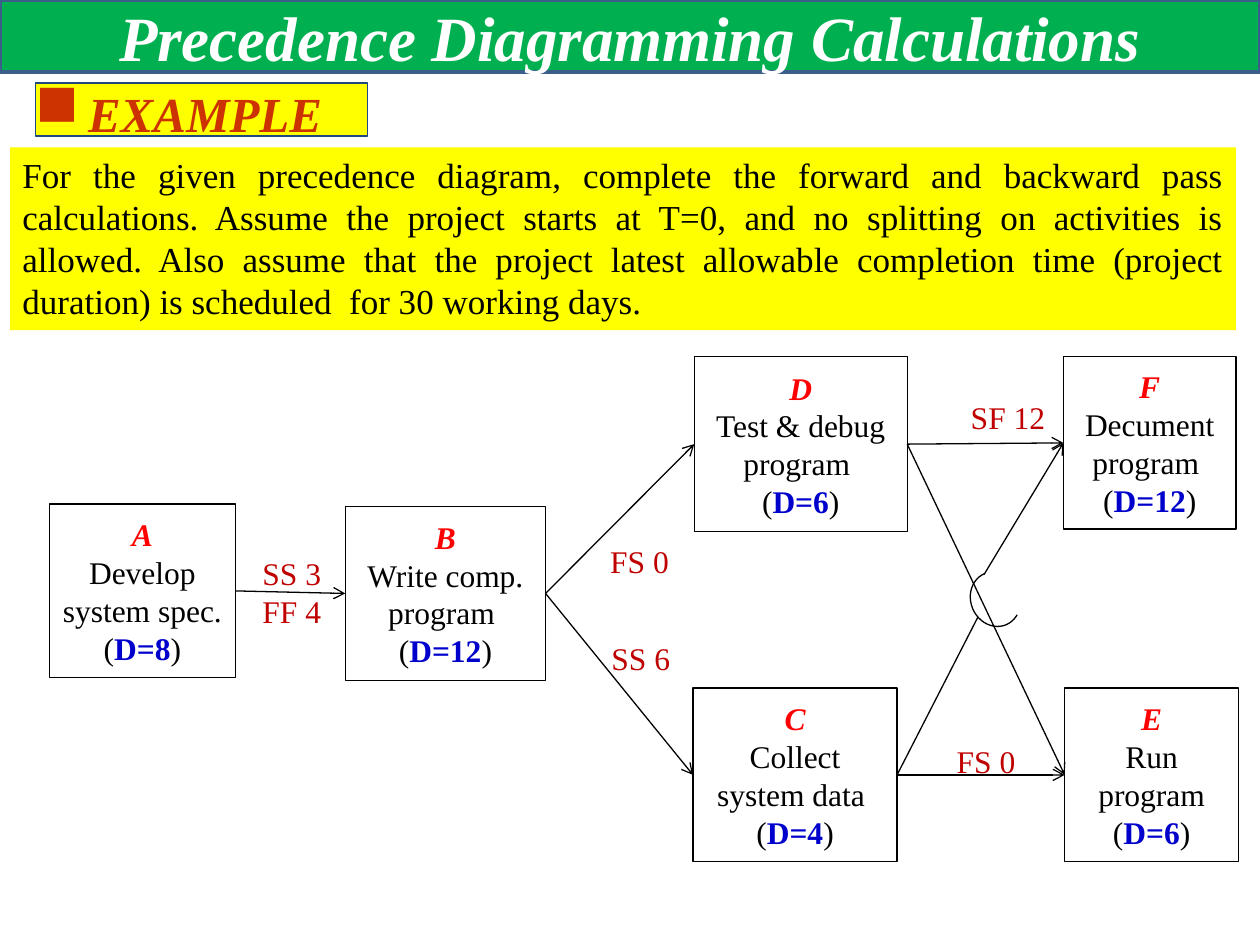
from lxml import etree
from pptx import Presentation
from pptx.dml.color import RGBColor
from pptx.enum.shapes import MSO_CONNECTOR, MSO_SHAPE
from pptx.enum.text import MSO_ANCHOR, MSO_AUTO_SIZE, PP_ALIGN
from pptx.oxml import parse_xml
from pptx.oxml.ns import nsdecls, qn
from pptx.util import Inches, Pt

RECT, ARC, STRAIGHT = MSO_SHAPE.RECTANGLE, MSO_SHAPE.ARC, MSO_CONNECTOR.STRAIGHT
TOP, MIDDLE = MSO_ANCHOR.TOP, MSO_ANCHOR.MIDDLE
CENTER, LEFT, JUSTIFY = PP_ALIGN.CENTER, PP_ALIGN.LEFT, PP_ALIGN.JUSTIFY
LEFT_SITE, RIGHT_SITE = 1, 3
FONT = "Times New Roman"
C = {"green": "00B050", "title_line": "3A5F8C", "yellow": "FFFF00", "navy": "1F497D",
     "orange": "CC3300", "black": "000000", "white": "FFFFFF", "label": "C00000",
     "letter": "FF0000", "duration": "0000CC"}

TITLE = "Precedence Diagramming Calculations"
HEADING = "EXAMPLE"
TASK = ("For the given precedence diagram, complete the forward and backward pass "
        "calculations. Assume the project starts at T=0, and no splitting on activities "
        "is allowed. Also assume that the project latest allowable completion time "
        "(project duration) is scheduled  for 30 working days. ")
# letter: (name, duration, (left, top, width, height))
ACTIVITIES = {
    "A": ("Develop system spec. ", 8, (0.39, 4, 1.48, 1.38)),
    "B": ("Write comp. program ", 12, (2.74, 4.02, 1.59, 1.38)),
    "C": ("Collect system data ", 4, (5.5, 5.46, 1.62, 1.38)),
    "D": ("Test & debug program ", 6, (5.51, 2.83, 1.69, 1.39)),
    "E": ("Run program", 6, (8.45, 5.46, 1.38, 1.38)),
    "F": ("Decument program ", 12, (8.44, 2.83, 1.37, 1.37)),
}
LINKS = ["AB", "BD", "BC", "DF", "CE", "DE"]
LABELS = [
    (["SS 3", "FF 4"], (1.97, 4.24, 0.69, 0.91)),
    (["FS 0"], (4.73, 4.16, 0.69, 0.59)),
    (["SS 6"], (4.74, 4.91, 0.69, 0.63)),
    (["SF 12"], (7.58, 2.96, 0.84, 0.69)),
    (["FS 0"], (7.48, 5.74, 0.69, 0.59)),
]
# The C-F link hops over the D-E link
HOP_START, HOP_END = (7.76, 4.9), (7.81, 4.56)
HOP_ARC = (7.68, 4.56, 0.44, 0.39)


def rgb(name):
    return RGBColor.from_string(C[name])


def inches(values):
    return [Inches(v) for v in values]


def style_font(font, size, color, bold=False, italic=False):
    font.name, font.size, font.bold, font.italic = FONT, Pt(size), bold, italic
    font.color.rgb = rgb(color)


def paint(s, fill, line=None, width=0.75):
    s.shadow.inherit = False
    s.fill.solid()
    s.fill.fore_color.rgb = rgb(fill)
    if line:
        s.line.color.rgb = rgb(line)
        s.line.width = Pt(width)
    else:
        s.line.fill.background()


def add_box(slide, at, fill, line=None, anchor=MIDDLE):
    s = slide.shapes.add_shape(RECT, *inches(at))
    paint(s, fill, line)
    s.text_frame.word_wrap = True
    s.text_frame.vertical_anchor = anchor
    return s


def add_title(slide):
    s = slide.shapes.title
    s.left, s.top, s.width, s.height = inches((0, 0, 10, 0.57))
    s._element.spPr.insert(1, parse_xml(
        f'<a:prstGeom {nsdecls("a")} prst="roundRect"><a:avLst>'
        '<a:gd name="adj" fmla="val 50000"/></a:avLst></a:prstGeom>'))
    paint(s, "green", "title_line", 2)
    tf = s.text_frame
    tf.text = TITLE
    tf.auto_size, tf.vertical_anchor = MSO_AUTO_SIZE.NONE, MIDDLE
    tf.paragraphs[0].alignment = CENTER
    style_font(tf.paragraphs[0].font, 36, "white", True, True)


def add_heading(slide):
    tf = add_box(slide, (0.28, 0.66, 2.64, 0.42), "yellow", "navy", TOP).text_frame
    tf.margin_left = tf.margin_top = tf.margin_right = tf.margin_bottom = 0
    tf.text = HEADING
    p = tf.paragraphs[0]
    p.alignment, p.space_before = LEFT, Pt(3)
    style_font(p.font, 28, "orange", True, True)
    pPr = p._p.get_or_add_pPr()
    pPr.set("marL", str(Inches(0.42)))
    pPr.set("indent", str(-Inches(0.42)))
    bullet = [parse_xml(f'<a:buClr {nsdecls("a")}><a:srgbClr val="{C["orange"]}"/></a:buClr>'),
              parse_xml(f'<a:buSzPct {nsdecls("a")} val="120000"/>'),
              parse_xml(f'<a:buChar {nsdecls("a")} char="■"/>')]
    for element in bullet:
        pPr.find(qn("a:defRPr")).addprevious(element)


def add_task(slide):
    tf = add_box(slide, (0.08, 1.17, 9.73, 1.45), "yellow", anchor=TOP).text_frame
    tf.text = TASK
    tf.paragraphs[0].alignment = JUSTIFY
    style_font(tf.paragraphs[0].font, 20, "black")


def add_activity(slide, letter, name, duration, at):
    s = add_box(slide, at, "white", "black")
    tf = s.text_frame
    tf.text = f"{letter}\n{name}\n"
    for p, color in zip(tf.paragraphs, ("letter", "black", "black")):
        p.alignment = CENTER
        style_font(p.font, 18, color, color == "letter", color == "letter")
    for text, color in (("(", "black"), (f"D={duration}", "duration"), (")", "black")):
        r = tf.paragraphs[2].add_run()
        r.text = text
        style_font(r.font, 18, color, color == "duration")
    return s


def add_label(slide, lines, at):
    tf = slide.shapes.add_textbox(*inches(at)).text_frame
    tf.text = "\n".join(lines)
    tf.vertical_anchor, tf.word_wrap = MIDDLE, False
    for p in tf.paragraphs:
        p.alignment = CENTER
        style_font(p.font, 18, "label")


def add_link(slide, start=None, end=None, begin=(0, 0), finish=(0, 0)):
    """Join activity boxes where given, otherwise points; an end box gets an arrowhead."""
    s = slide.shapes.add_connector(STRAIGHT, *inches(begin + finish))
    s.line.color.rgb = rgb("black")
    s.line.width = Pt(0.75)
    if start:
        s.begin_connect(start, RIGHT_SITE)
    if end:
        s.end_connect(end, LEFT_SITE)
        etree.SubElement(s.line._get_or_add_ln(), qn("a:tailEnd")).set("type", "arrow")
    etree.SubElement(s._element.spPr, qn("a:effectLst"))


def main():
    prs = Presentation()
    prs.slide_width, prs.slide_height = Inches(10), Inches(7.5)
    slide = prs.slides.add_slide(prs.slide_layouts[5])
    add_title(slide)
    add_heading(slide)
    add_task(slide)
    for lines, at in LABELS:
        add_label(slide, lines, at)
    boxes = {letter: add_activity(slide, letter, *activity)
             for letter, activity in ACTIVITIES.items()}
    for start, end in LINKS:
        add_link(slide, boxes[start], boxes[end])

    add_link(slide, start=boxes["C"], finish=HOP_START)
    add_link(slide, end=boxes["F"], begin=HOP_END)
    arc = slide.shapes.add_shape(ARC, *inches(HOP_ARC))
    arc.rotation = 247
    arc.adjustments[0], arc.adjustments[1] = 89.25, 0
    arc.shadow.inherit = False
    arc.fill.background()
    arc.line.color.rgb = rgb("black")
    arc.line.width = Pt(0.75)
    prs.save("out.pptx")


if __name__ == "__main__":
    main()
